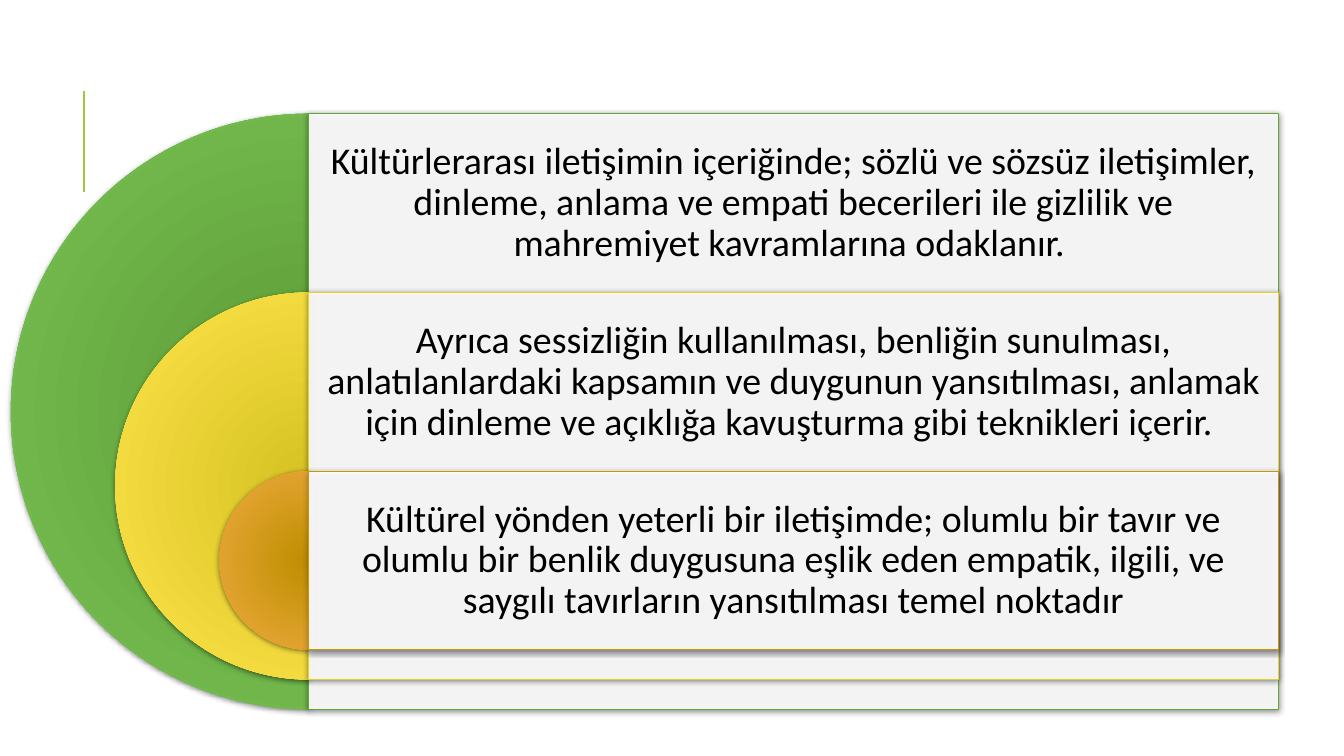
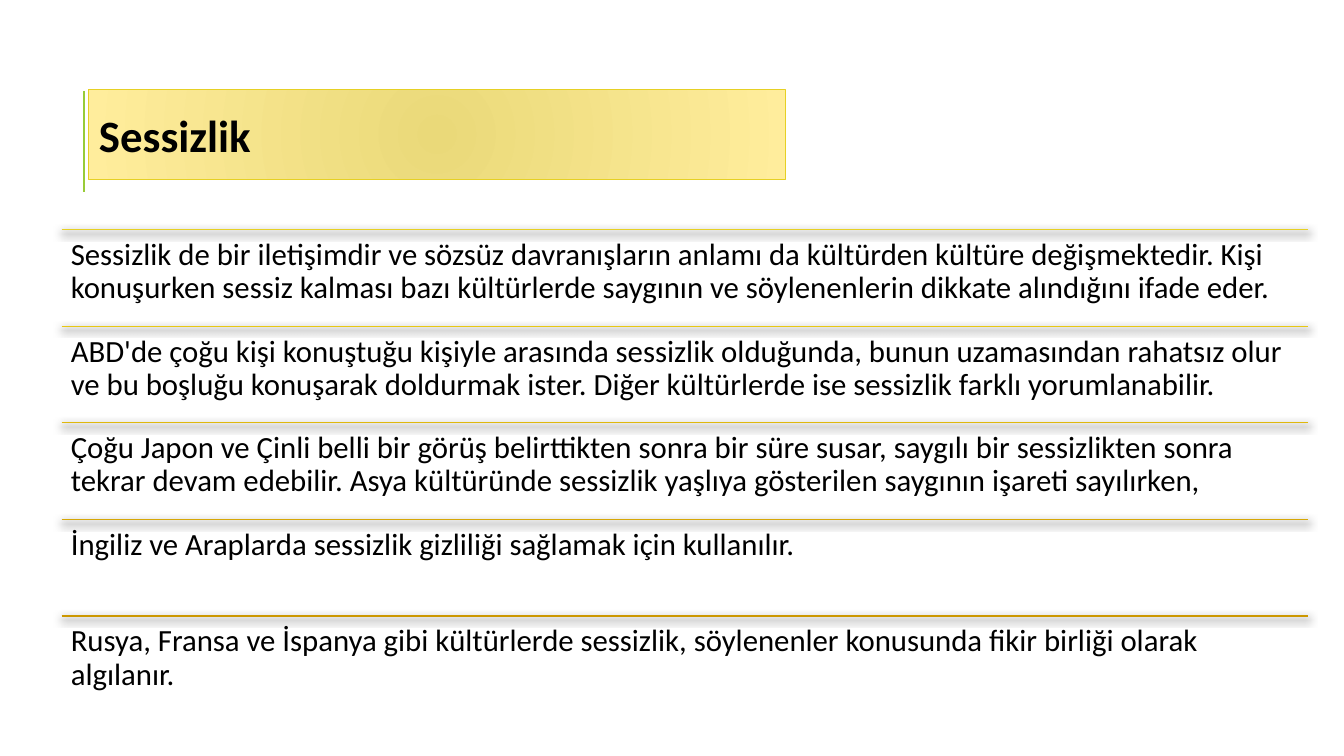
from dataclasses import dataclass

from lxml import etree
from pptx import Presentation
from pptx.dml.color import RGBColor
from pptx.enum.shapes import MSO_CONNECTOR, MSO_SHAPE
from pptx.enum.text import MSO_ANCHOR, MSO_AUTO_SIZE, PP_ALIGN
from pptx.oxml.ns import qn
from pptx.util import Pt

STRAIGHT = MSO_CONNECTOR.STRAIGHT
PIE, RECTANGLE = MSO_SHAPE.PIE, MSO_SHAPE.RECTANGLE
TOP, MIDDLE = MSO_ANCHOR.TOP, MSO_ANCHOR.MIDDLE
LEFT, CENTER = PP_ALIGN.LEFT, PP_ALIGN.CENTER
NO_AUTOFIT = MSO_AUTO_SIZE.NONE

FONT = "Calibri"
TITLE_ONLY_LAYOUT, BLANK_LAYOUT = 5, 6
COLORS = {
    "text": "000000",
    "card": "FFFFFF",
    "accent": "99CB38",
    "green": "63A537",
    "green_inner": "5C9A33",
    "green_outer": "79C356",
    "yellow": "E6D024",
    "yellow_inner": "D6C222",
    "yellow_outer": "FFE54B",
    "orange": "CC9700",
    "orange_inner": "BE8D00",
    "orange_outer": "EFAC41",
    "title_inner": "EAD979",
    "title_outer": "FFED9C",
    "rule_2": "E7C713",
    "rule_3": "DFB80C",
    "rule_4": "D6A706",
}


@dataclass(frozen=True)
class Box:
    left: float
    top: float
    width: float
    height: float

    def lengths(self) -> tuple:
        return Pt(self.left), Pt(self.top), Pt(self.width), Pt(self.height)


@dataclass(frozen=True)
class Shadow:
    opacity: int
    blur: float
    distance: float


@dataclass(frozen=True)
class Band:
    color: str
    text: str


@dataclass(frozen=True)
class TextStyle:
    size: float
    inset: float
    align: PP_ALIGN
    anchor: MSO_ANCHOR


CARD_SHADOW = Shadow(50, 4, 1)
RULE_SHADOW = Shadow(60, 6, 2)
CARD_TEXT = TextStyle(27, 8, CENTER, MIDDLE)
RULE_TEXT = TextStyle(22, 6.6, LEFT, TOP)

# Nested half discs: each is smaller and starts one band lower
DISC_CENTER, DISC_TOP = 220.5, 81.2
DISC_DIAMETER, DISC_SHRINK = 425.5, 149
CARD_WIDTH, BAND_HEIGHT = 692.5, 127.7

# Ruled list
RULE_LEFT, RULE_TOP, RULE_WIDTH, RULE_STEP = 44, 164, 890.5, 69

TITLE_BOX = Box(63.5, 64, 497.5, 64)

CARDS = [
    Band("green", "Kültürlerarası iletişimin içeriğinde; sözlü ve sözsüz iletişimler, "
         "dinleme, anlama ve empati becerileri ile gizlilik ve mahremiyet "
         "kavramlarına odaklanır. "),
    Band("yellow", "Ayrıca sessizliğin kullanılması, benliğin sunulması, "
         "anlatılanlardaki kapsamın ve duygunun yansıtılması, anlamak için dinleme "
         "ve açıklığa kavuşturma gibi teknikleri içerir. "),
    Band("orange", "Kültürel yönden yeterli bir iletişimde; olumlu bir tavır ve "
         "olumlu bir benlik duygusuna eşlik eden empatik, ilgili, ve saygılı "
         "tavırların yansıtılması temel noktadır"),
]
RULES = [
    Band("yellow", "Sessizlik de bir iletişimdir ve sözsüz davranışların anlamı da "
         "kültürden kültüre değişmektedir. Kişi konuşurken sessiz kalması bazı "
         "kültürlerde saygının ve söylenenlerin dikkate alındığını ifade eder."),
    Band("rule_2", "ABD'de çoğu kişi konuştuğu kişiyle arasında sessizlik olduğunda, "
         "bunun uzamasından rahatsız olur ve bu boşluğu konuşarak doldurmak ister. "
         "Diğer kültürlerde ise sessizlik farklı yorumlanabilir."),
    Band("rule_3", "Çoğu Japon ve Çinli belli bir görüş belirttikten sonra bir süre "
         "susar, saygılı bir sessizlikten sonra tekrar devam edebilir. Asya "
         "kültüründe sessizlik yaşlıya gösterilen saygının işareti sayılırken,"),
    Band("rule_4", "İngiliz ve Araplarda sessizlik gizliliği sağlamak için kullanılır."),
    Band("orange", "Rusya, Fransa ve İspanya gibi kültürlerde sessizlik, söylenenler "
         "konusunda fikir birliği olarak algılanır."),
]


def color(name: str) -> RGBColor:
    return RGBColor.from_string(COLORS[name])


def set_line(shape, name: str, width: float = 0.75) -> None:
    shape.line.color.rgb = color(name)
    shape.line.width = Pt(width)


def set_effects(shape, shadow: Shadow | None = None) -> None:
    """Replace theme effects; call after the line has been set."""
    effects = etree.SubElement(shape.element.spPr, qn("a:effectLst"))
    if shadow:
        outer = etree.SubElement(
            effects, qn("a:outerShdw"), blurRad=str(Pt(shadow.blur)),
            dist=str(Pt(shadow.distance)), dir="5400000", rotWithShape="0")
        tint = etree.SubElement(outer, qn("a:srgbClr"), val=COLORS["text"])
        etree.SubElement(tint, qn("a:alpha"), val=str(shadow.opacity * 1000))


def set_radial_fill(shape, name: str) -> None:
    shape.fill.gradient()
    for stop, part in zip(shape.fill.gradient_stops, ("inner", "outer")):
        stop.color.rgb = color(f"{name}_{part}")
        stop.position = 0 if part == "inner" else 1
    gradient = shape.element.spPr.find(qn("a:gradFill"))
    gradient.remove(gradient.find(qn("a:lin")))
    circle = etree.SubElement(gradient, qn("a:path"), path="circle")
    etree.SubElement(circle, qn("a:fillToRect"), {side: "100000" for side in "ltrb"})


def add_rule(slide, start: tuple, end: tuple, name: str, width: float = 0.75,
             shadow: Shadow | None = None) -> None:
    rule = slide.shapes.add_connector(STRAIGHT, *(Pt(value) for value in start + end))
    set_line(rule, name, width)
    set_effects(rule, shadow)


def add_text(slide, box: Box, text: str, style: TextStyle) -> None:
    frame = slide.shapes.add_textbox(*box.lengths()).text_frame
    frame.word_wrap = True
    frame.vertical_anchor = style.anchor
    frame.margin_left = frame.margin_right = Pt(style.inset)
    frame.margin_top = frame.margin_bottom = Pt(style.inset)
    paragraph = frame.paragraphs[0]
    paragraph.text = text
    paragraph.alignment = style.align
    paragraph.line_spacing = 0.9
    set_font(paragraph, style.size)


def set_font(paragraph, size: float, bold: bool = False) -> None:
    paragraph.font.name = FONT
    paragraph.font.size = Pt(size)
    paragraph.font.bold = bold
    paragraph.font.color.rgb = color("text")


def add_slide(presentation, layout: int):
    """Start a slide with the shared accent line."""
    slide = presentation.slides.add_slide(presentation.slide_layouts[layout])
    add_rule(slide, (60, 136.8), (60, 64.8), "accent", 1.5)
    return slide


def add_card(slide, index: int, card: Band) -> None:
    diameter = DISC_DIAMETER - DISC_SHRINK * index
    top = DISC_TOP + BAND_HEIGHT * index
    # Left half of a disc
    disc_box = Box(DISC_CENTER - diameter / 2, top, diameter, diameter)
    disc = slide.shapes.add_shape(PIE, *disc_box.lengths())
    disc.adjustments[0], disc.adjustments[1] = 54, 162
    set_radial_fill(disc, card.color)
    disc.line.fill.background()
    set_effects(disc, CARD_SHADOW)
    # Translucent card
    panel_box = Box(DISC_CENTER, top, CARD_WIDTH, diameter)
    panel = slide.shapes.add_shape(RECTANGLE, *panel_box.lengths())
    panel.fill.solid()
    panel.fill.fore_color.rgb = color("card")
    fill = panel.element.spPr.find(qn("a:solidFill"))
    etree.SubElement(fill[0], qn("a:alpha"), val="90000")
    set_line(panel, card.color)
    set_effects(panel, CARD_SHADOW)
    add_text(slide, Box(DISC_CENTER, top, CARD_WIDTH, BAND_HEIGHT), card.text, CARD_TEXT)


def set_title(slide, text: str) -> None:
    title = slide.shapes.title
    title.left, title.top, title.width, title.height = TITLE_BOX.lengths()
    geometry = etree.SubElement(title.element.spPr, qn("a:prstGeom"), prst="roundRect")
    etree.SubElement(geometry, qn("a:avLst"))
    set_radial_fill(title, "title")
    set_line(title, "yellow")
    frame = title.text_frame
    frame.auto_size = NO_AUTOFIT
    frame.vertical_anchor = MIDDLE
    paragraph = frame.paragraphs[0]
    paragraph.text = text
    paragraph.alignment = LEFT
    set_font(paragraph, 32, bold=True)


def build_content_slide(presentation) -> None:
    slide = add_slide(presentation, BLANK_LAYOUT)
    for index, card in enumerate(CARDS):
        add_card(slide, index, card)


def build_silence_slide(presentation) -> None:
    slide = add_slide(presentation, TITLE_ONLY_LAYOUT)
    set_title(slide, "Sessizlik")
    for index, rule in enumerate(RULES):
        top = RULE_TOP + RULE_STEP * index
        add_rule(slide, (RULE_LEFT, top), (RULE_LEFT + RULE_WIDTH, top),
                 rule.color, shadow=RULE_SHADOW)
        add_text(slide, Box(RULE_LEFT, top, RULE_WIDTH, RULE_STEP), rule.text, RULE_TEXT)


def main() -> None:
    presentation = Presentation()
    presentation.slide_width, presentation.slide_height = Pt(960), Pt(540)
    build_content_slide(presentation)
    build_silence_slide(presentation)
    presentation.save("out.pptx")


if __name__ == "__main__":
    main()
